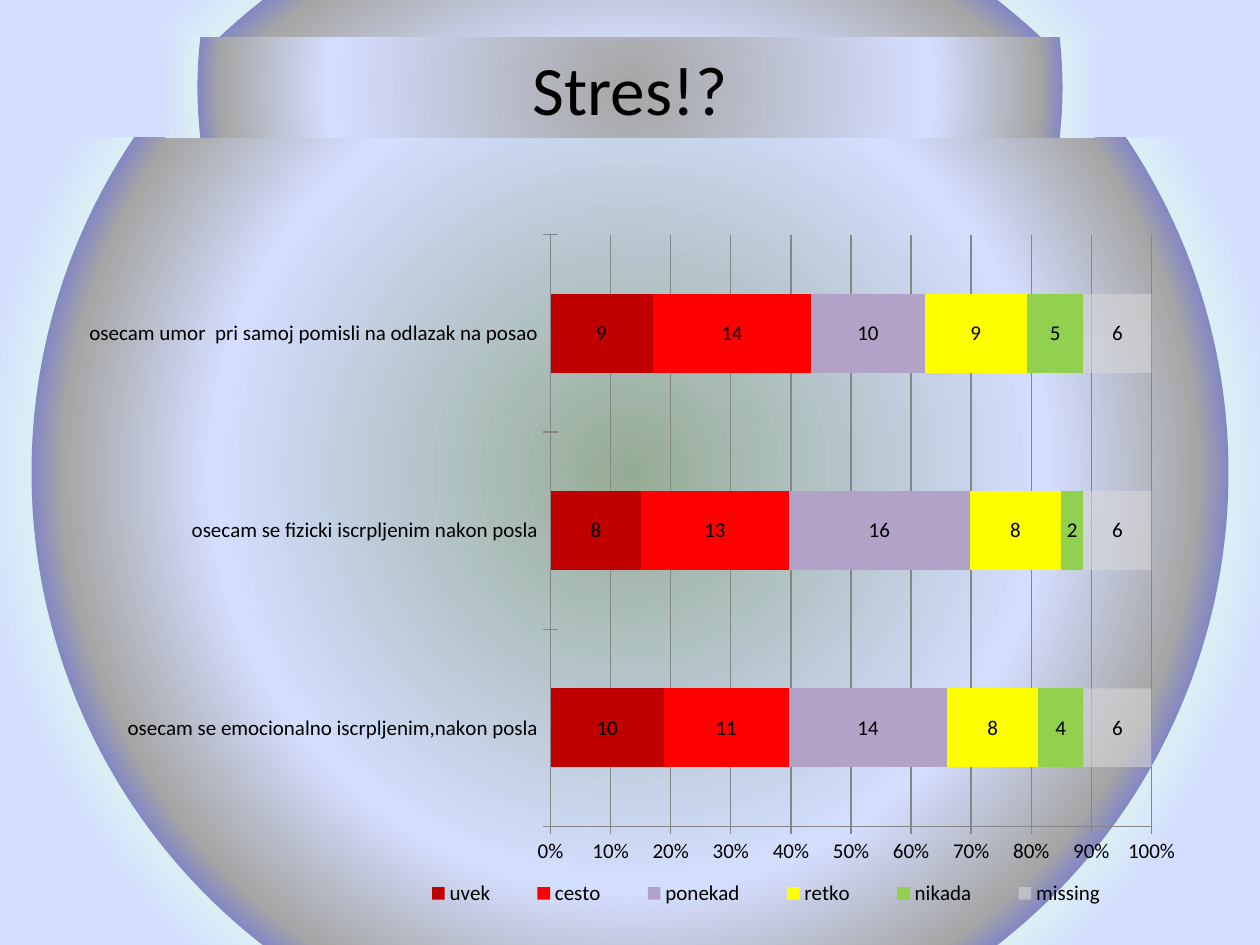
from lxml.etree import SubElement
from pptx import Presentation
from pptx.chart.data import CategoryChartData
from pptx.dml.color import RGBColor
from pptx.enum.chart import XL_CHART_TYPE, XL_LEGEND_POSITION, XL_TICK_MARK
from pptx.enum.text import MSO_ANCHOR, PP_ALIGN
from pptx.oxml import parse_xml
from pptx.oxml.ns import nsdecls, qn
from pptx.util import Cm, Pt

FONT = "Calibri"
HUES = {
    "text": "000000", "line": "868686", "gray": "A6A6A6", "pale": "D4DEFF",
    "rim": "8488C4", "mist": "DBEEF4", "core": "96AB94",
    "uvek": "C00000", "cesto": "FF0000", "ponekad": "B3A2C7",
    "retko": "FFFF00", "nikada": "92D050", "missing": "D9D9D9",
}
TITLE = "Stres!?"
CATS = [
    "osecam se emocionalno iscrpljenim,nakon posla",
    "osecam se fizicki iscrpljenim nakon posla",
    "osecam umor  pri samoj pomisli na odlazak na posao",
]
DATA = {
    "uvek": (10, 8, 9),
    "cesto": (11, 13, 14),
    "ponekad": (14, 16, 10),
    "retko": (8, 8, 9),
    "nikada": (4, 2, 5),
    "missing": (6, 6, 6),
}
RINGS = [(53, "pale"), (72, "gray"), (76, "rim"), (76, "mist"), (83, "pale")]
PLOT = (0.43, 0.02, 0.53, 0.84)
LEGEND = (0.29, 0.93, 0.66, 0.05)


def color(name):
    return RGBColor.from_string(HUES[name])


def set_font(font, size):
    font.name = FONT
    font.size = Pt(size)
    font.color.rgb = color("text")


def radial(host, core, alpha=100):
    grad = parse_xml(
        f'<a:gradFill {nsdecls("a")} rotWithShape="1"><a:gsLst/><a:path path="circle">'
        '<a:fillToRect l="50000" t="50000" r="50000" b="50000"/></a:path></a:gradFill>')
    for pos, name in [(0, core)] + RINGS:
        stop = SubElement(grad[0], qn("a:gs"), pos=str(pos * 1000))
        tint = SubElement(stop, qn("a:srgbClr"), val=HUES[name])
        if pos == 0 and alpha < 100:
            SubElement(tint, qn("a:alpha"), val=str(alpha * 1000))
    old = host.find(qn("a:solidFill"))
    host.replace(old, grad)


def place(host, spot, index, inner=False):
    for old in host.findall(qn("c:layout")):
        host.remove(old)
    layout = parse_xml(f'<c:layout {nsdecls("c")}><c:manualLayout/></c:layout>')
    parts = [("layoutTarget", "inner")] if inner else []
    parts += [("xMode", "edge"), ("yMode", "edge")] + list(zip("xywh", spot))
    for tag, val in parts:
        SubElement(layout[0], qn(f"c:{tag}"), val=str(val))
    host.insert(index, layout)


def add_title(slide):
    title = slide.shapes.title
    title.left, title.top, title.width, title.height = Cm(1.27), Cm(0.76), Cm(22.86), Cm(2.01)
    title.fill.solid()
    radial(title.element.spPr, "gray")
    frame = title.text_frame
    frame.text = TITLE
    frame.vertical_anchor = MSO_ANCHOR.MIDDLE
    para = frame.paragraphs[0]
    para.alignment = PP_ALIGN.CENTER
    set_font(para.font, 39.6)


def add_bars(slide):
    data = CategoryChartData()
    data.categories = CATS
    for name, vals in DATA.items():
        data.add_series(name, vals)
    chart = slide.shapes.add_chart(
        XL_CHART_TYPE.BAR_STACKED_100, Cm(1.27), Cm(4.45), Cm(22.86), Cm(14.2), data).chart
    set_font(chart.font, 12)
    chart.has_title = False
    plot = chart.plots[0]
    plot.vary_by_categories = False
    plot.gap_width = 150
    plot.overlap = 100
    for bar in plot.series:
        bar.format.fill.solid()
        bar.format.fill.fore_color.rgb = color(bar.name)
        bar.data_labels.show_value = True
        set_font(bar.data_labels.font, 12)
    tint = bar.format.fill._xPr.find(".//" + qn("a:srgbClr"))
    SubElement(tint, qn("a:alpha"), val="57000")

    for axis in (chart.category_axis, chart.value_axis):
        axis.major_tick_mark = XL_TICK_MARK.CROSS
        axis.minor_tick_mark = XL_TICK_MARK.NONE
        axis.format.line.color.rgb = color("line")
    axis.has_major_gridlines = True
    axis.major_gridlines.format.line.color.rgb = color("line")
    axis.maximum_scale, axis.minimum_scale, axis.major_unit = 1, 0, 0.1
    axis.tick_labels.number_format = "0%"
    axis.tick_labels.number_format_is_linked = False

    chart.has_legend = True
    chart.legend.position = XL_LEGEND_POSITION.BOTTOM
    chart.legend.include_in_layout = False
    place(chart.legend._element, LEGEND, 1)
    place(chart._chartSpace.chart.plotArea, PLOT, 0, inner=True)


def main():
    deck = Presentation()
    deck.slide_width, deck.slide_height = Cm(25.4), Cm(19.05)
    slide = deck.slides.add_slide(deck.slide_layouts[5])
    slide.background.fill.solid()
    radial(slide.element.find(".//" + qn("p:bgPr")), "core", 71)
    add_title(slide)
    add_bars(slide)
    deck.save("out.pptx")


if __name__ == "__main__":
    main()
